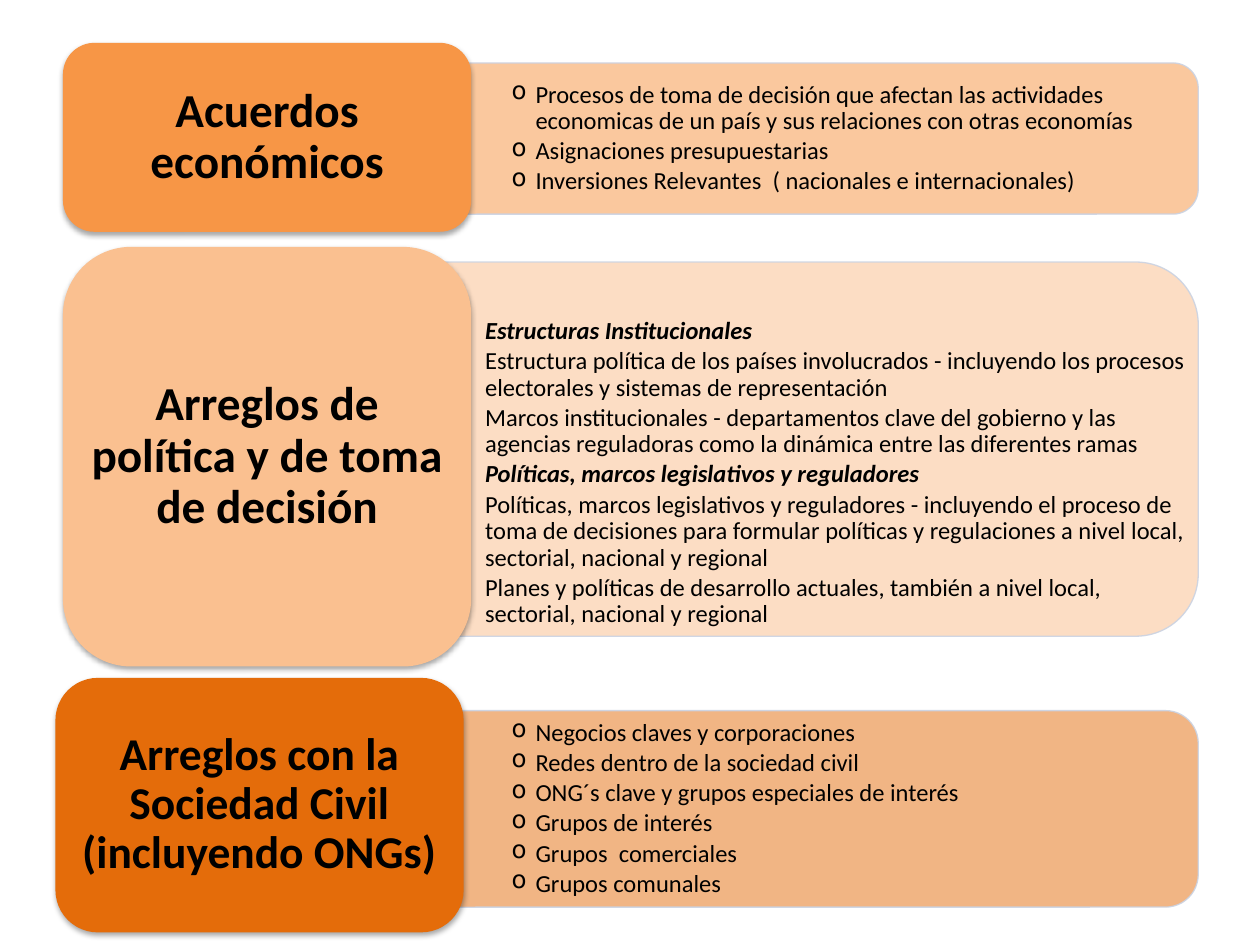
from pptx import Presentation
from pptx.dml.color import RGBColor
from pptx.enum import shapes, text
from pptx.oxml import parse_xml
from pptx.oxml.ns import nsdecls, qn
from pptx.util import Inches, Pt

COLUMNS, ROWS = 100, 75
HEADINGS = {"Estructuras Institucionales", "Políticas, marcos legislativos y reguladores"}

# One entry per topic; positions are in grid columns and rows
TOPICS = [
    dict(label="Acuerdos económicos", size=27, color="F79646", opacity=52,
         left=5, top=3.4, height=15, panel_top=5, panel_height=12,
         text_drop=0, bullets=True, lines=[
             "Procesos de toma de decisión que afectan las actividades economicas "
             "de un país y sus relaciones con otras economías",
             "Asignaciones presupuestarias",
             "Inversiones Relevantes  ( nacionales e internacionales)"]),
    dict(label="Arreglos de política y de toma de decisión", size=27, color="FAC090", opacity=53,
         left=5, top=19.6, height=33.3, panel_top=20.8, panel_height=29.7,
         text_drop=1.9, bullets=False, lines=[
             "Estructuras Institucionales",
             "Estructura política de los países involucrados - incluyendo los "
             "procesos electorales y sistemas de representación",
             "Marcos institucionales - departamentos clave del gobierno y las "
             "agencias reguladoras como la dinámica entre las diferentes ramas",
             "Políticas, marcos legislativos y reguladores",
             "Políticas, marcos legislativos y reguladores - incluyendo el proceso de "
             "toma de decisiones para formular políticas y regulaciones a nivel "
             "local, sectorial, nacional y regional",
             "Planes y políticas de desarrollo actuales, también a nivel local, "
             "sectorial, nacional y regional"]),
    dict(label="Arreglos con la Sociedad Civil (incluyendo ONGs)", size=26, color="E46C0A", opacity=50,
         left=4.4, top=53.8, height=20.2, panel_top=56.4, panel_height=15.6,
         text_drop=0, bullets=True, lines=[
             "Negocios claves y corporaciones",
             "Redes dentro de la sociedad civil",
             "ONG´s clave y grupos especiales de interés",
             "Grupos de interés",
             "Grupos  comerciales",
             "Grupos comunales"]),
]


def rgb(value):
    return RGBColor.from_string(value)


def assign(target, values):
    for name, value in values.items():
        setattr(target, name, value)


def set_opacity(fill_parent, percent):
    color = fill_parent.find(qn("a:solidFill"))[0]
    color.append(parse_xml(f'<a:alpha {nsdecls("a")} val="{percent * 1000}"/>'))


class TopicSlide:
    font = "Calibri"
    ink = "000000"
    outline = "CBD3E3"
    label_width = 32.4
    panel_left, panel_width, text_width = 30.2, 64.9, 64.3

    def __init__(self, deck):
        self.deck = deck
        self.page = deck.slides.add_slide(deck.slide_layouts[6])

    def area(self, left, top, width, height):
        across, down = self.deck.slide_width / COLUMNS, self.deck.slide_height / ROWS
        return [round(left * across), round(top * down), round(width * across), round(height * down)]

    def fill_text(self, frame, lines, size, after, bold=False, **paragraph_style):
        assign(frame, dict(word_wrap=True, vertical_anchor=text.MSO_ANCHOR.MIDDLE))
        for index, line in enumerate(lines):
            para = frame.add_paragraph() if index else frame.paragraphs[0]
            assign(para, dict(line_spacing=0.9, space_after=Pt(after), **paragraph_style))
            span = para.add_run()
            heading = line in HEADINGS
            span.text = line
            assign(span.font, dict(name=self.font, size=Pt(size), bold=bold or heading, italic=heading))
            span.font.color.rgb = rgb(self.ink)

    def panel(self, top, height, color, opacity):
        # A quarter turn puts the two rounded corners on the right
        left = self.panel_left + (self.panel_width - height) / 2
        turned_top = top + (height - self.panel_width) / 2
        box = self.page.shapes.add_shape(shapes.MSO_SHAPE.ROUND_2_SAME_RECTANGLE,
                                         *self.area(left, turned_top, height, self.panel_width))
        box.rotation = 90
        box.shadow.inherit = False
        box.fill.solid()
        box.fill.fore_color.rgb = rgb(color)
        box.line.color.rgb = rgb(self.outline)
        box.line.width = Pt(0.75)
        properties = box._element.spPr
        set_opacity(properties, opacity)
        set_opacity(properties.find(qn("a:ln")), 90)

    def details(self, top, height, lines, bullets):
        box = self.page.shapes.add_textbox(*self.area(self.panel_left, top, self.text_width, height))
        frame = box.text_frame
        assign(frame, dict(margin_left=Inches(0.04), margin_right=Inches(0.04),
                           margin_top=Inches(0.02), margin_bottom=Inches(0.02)))
        self.fill_text(frame, lines, size=14, after=2.1)
        margin, indent = (1.19, -0.19) if bullets else (0.79, 0)
        for para in frame.paragraphs:
            properties = para._p.get_or_add_pPr()
            properties.set("marL", str(Inches(margin)))
            properties.set("indent", str(Inches(indent)))
            if bullets:
                properties.append(parse_xml(f'<a:buChar {nsdecls("a")} char="o"/>'))

    def label(self, left, top, height, caption, size, color):
        box = self.page.shapes.add_shape(shapes.MSO_SHAPE.ROUNDED_RECTANGLE,
                                         *self.area(left, top, self.label_width, height))
        box.fill.solid()
        box.fill.fore_color.rgb = rgb(color)
        box.line.fill.background()
        box._element.spPr.append(parse_xml(
            f'<a:effectLst {nsdecls("a")}><a:outerShdw blurRad="{Pt(3.1)}" dist="{Pt(1.8)}" '
            'dir="5400000" rotWithShape="0"><a:srgbClr val="000000"><a:alpha val="35000"/>'
            '</a:srgbClr></a:outerShdw></a:effectLst>'))
        frame = box.text_frame
        assign(frame, dict(margin_left=Inches(0.02), margin_right=Inches(0.02)))
        self.fill_text(frame, [caption], size, after=size * 0.35, bold=True,
                       alignment=text.PP_ALIGN.CENTER)

    def topic(self, item):
        self.panel(item["panel_top"], item["panel_height"], item["color"], item["opacity"])
        self.details(item["panel_top"] + item["text_drop"], item["panel_height"],
                     item["lines"], item["bullets"])
        self.label(item["left"], item["top"], item["height"],
                   item["label"], item["size"], item["color"])


def main():
    deck = Presentation()
    assign(deck, dict(slide_width=Inches(10), slide_height=Inches(7.5)))
    slide = TopicSlide(deck)
    for item in TOPICS:
        slide.topic(item)
    deck.save("out.pptx")


if __name__ == "__main__":
    main()
